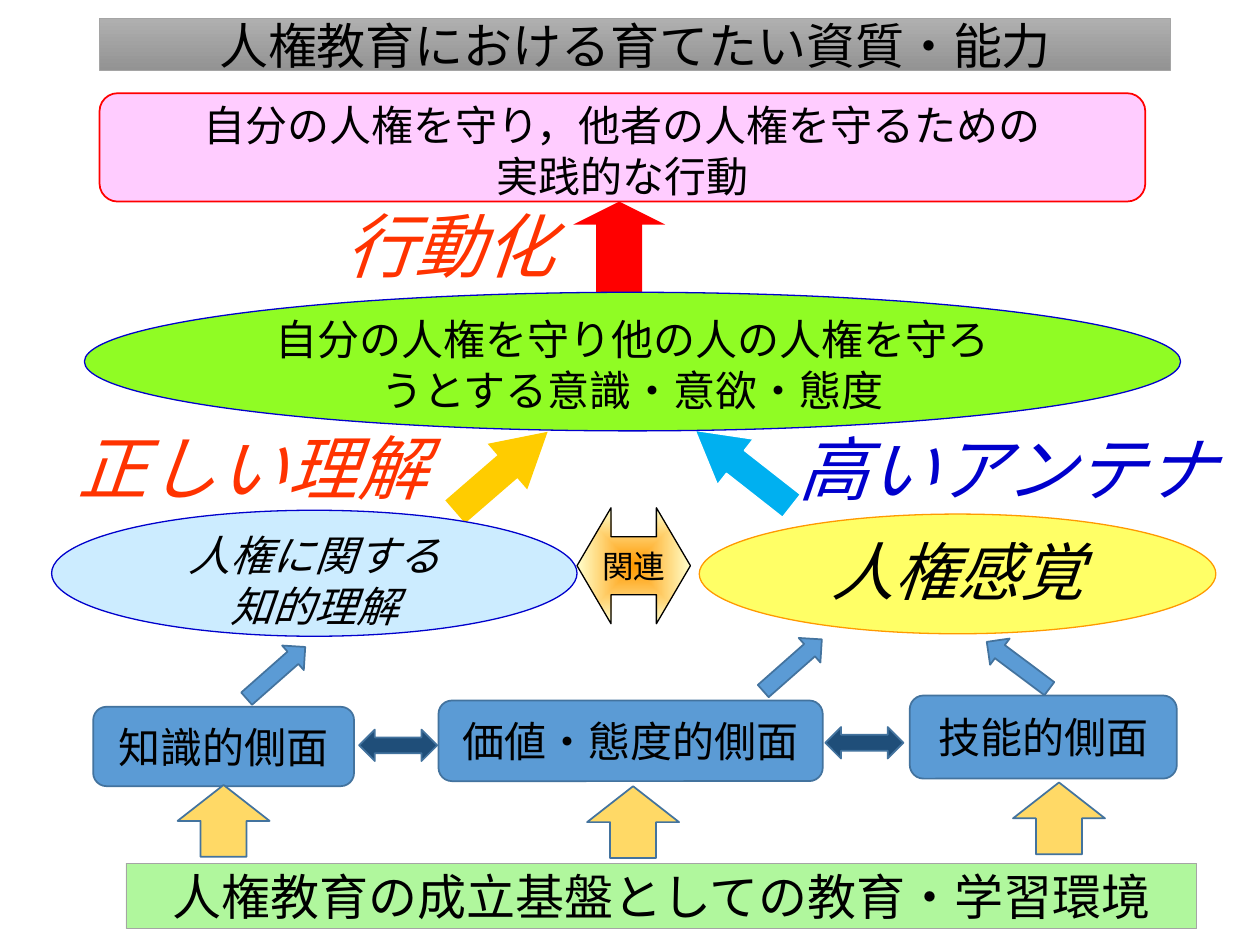
from dataclasses import dataclass

from lxml import etree
from pptx import Presentation
from pptx.dml.color import RGBColor
from pptx.enum.shapes import MSO_SHAPE
from pptx.enum.text import MSO_ANCHOR, MSO_AUTO_SIZE, PP_ALIGN
from pptx.oxml.ns import qn
from pptx.util import Inches, Pt

RECT, ROUNDED, OVAL = MSO_SHAPE.RECTANGLE, MSO_SHAPE.ROUNDED_RECTANGLE, MSO_SHAPE.OVAL
UP, RIGHT, BOTH = MSO_SHAPE.UP_ARROW, MSO_SHAPE.RIGHT_ARROW, MSO_SHAPE.LEFT_RIGHT_ARROW
TOP, MIDDLE = MSO_ANCHOR.TOP, MSO_ANCHOR.MIDDLE
CENTER, FIT_SHAPE = PP_ALIGN.CENTER, MSO_AUTO_SIZE.SHAPE_TO_FIT_TEXT

# The slide is a grid of 100 columns by 75 rows of square cells
COLUMNS, ROWS, CELL = 100, 75, 0.1


@dataclass(frozen=True)
class Theme:
    font: str = "Noto Sans CJK JP"
    link_font: str = "Comic Neue"
    small: int = 18
    body: int = 24
    banner: int = 28
    sense: int = 36
    callout: int = 40
    ink: str = "000000"
    white: str = "FFFFFF"
    red: str = "FF0000"
    vermilion: str = "FF3300"
    navy: str = "0000CC"
    pale_blue: str = "99CCFF"
    pink: str = "FFCCFF"
    lime: str = "90FC24"
    yellow: str = "FFFF66"
    orange: str = "FF9900"
    cream: str = "FFFFCC"
    gold: str = "FFCC00"
    sky: str = "00B0F0"
    ice: str = "CCECFF"
    blue: str = "5B9BD5"
    blue_edge: str = "43739E"
    dark_blue: str = "1F4E79"
    sand: str = "FFD966"
    mint: str = "B0F79D"
    grey: str = "A5A5A5"
    grey_light: str = "AFAFAF"
    grey_dark: str = "939393"


THEME = Theme()


def cells(*counts):
    return [Inches(count * CELL) for count in counts]


def rgb(code):
    return RGBColor.from_string(code)


def add_figure(slide, preset, frame, fill, edge=None, edge_width=1, turn=0, adjust=()):
    """Draw a preset shape; a pair of fill colours gives a gradient."""
    figure = slide.shapes.add_shape(preset, *cells(*frame))
    figure.shadow.inherit = False
    figure.rotation = turn
    for index, value in enumerate(adjust):
        figure.adjustments[index] = value
    if isinstance(fill, tuple):
        figure.fill.gradient()
        figure.fill.gradient_angle = 270
        for stop, code in zip(figure.fill.gradient_stops, fill):
            stop.color.rgb = rgb(code)
    else:
        figure.fill.solid()
        figure.fill.fore_color.rgb = rgb(fill)
    if edge:
        figure.line.color.rgb = rgb(edge)
        figure.line.width = Pt(edge_width)
    else:
        figure.line.fill.background()
    return figure


def make_gradient_radiate(figure):
    """Let the gradient run from the centre outwards."""
    linear = next(figure._element.spPr.iter(qn("a:lin")))
    radial = etree.Element(qn("a:path"), {"path": "rect"})
    etree.SubElement(radial, qn("a:fillToRect"), dict.fromkeys("ltrb", "50000"))
    linear.getparent().replace(linear, radial)


def write(figure, text, size, color=THEME.ink, font=THEME.font, italic=False,
          anchor=MIDDLE, align=CENTER, wrap=True, tight=False):
    frame = figure.text_frame
    frame.text = text
    frame.word_wrap = wrap
    frame.vertical_anchor = anchor
    if tight:
        frame.margin_left = frame.margin_right = Inches(0.08)
        frame.margin_top = frame.margin_bottom = Inches(0.01)
    for paragraph in frame.paragraphs:
        paragraph.alignment = align
        for run in paragraph.runs:
            run.font.size = Pt(size)
            run.font.italic = italic
            run.font.color.rgb = rgb(color)
            run.font.name = font
            etree.SubElement(run.font._element, qn("a:ea"), {"typeface": font})


def add_callout(slide, frame, text, color, outline):
    """Large slanted words with outlined letters."""
    callout = slide.shapes.add_textbox(*cells(*frame))
    write(callout, text, THEME.callout, color, italic=True, anchor=TOP, align=None, wrap=False)
    callout.text_frame.auto_size = FIT_SHAPE
    for run in callout.text_frame.paragraphs[0].runs:
        line = etree.Element(qn("a:ln"), {"w": str(Pt(1))})
        solid = etree.SubElement(line, qn("a:solidFill"))
        etree.SubElement(solid, qn("a:srgbClr"), {"val": outline})
        run.font._element.insert(0, line)


def add_goal(slide):
    goal = add_figure(slide, ROUNDED, (7.9, 7.4, 83, 8.6), THEME.pink, THEME.red)
    write(goal, "自分の人権を守り，他者の人権を守るための\n実践的な行動",
          THEME.body, anchor=TOP, tight=True)


def add_main_arrows(slide):
    add_figure(slide, UP, (45.5, 16, 7.3, 7.3), THEME.red, adjust=(0.5, 0.25))
    add_figure(slide, UP, (37.4, 32.6, 4.8, 9.7), THEME.gold, turn=49.1, adjust=(0.5, 0.88))
    add_figure(slide, UP, (56.7, 32.3, 4.6, 9.7), THEME.sky, THEME.white, 0.75,
               turn=308.1, adjust=(0.5, 0.88))
    relation = add_figure(slide, BOTH, (45.8, 40.3, 9, 9.2), (THEME.orange, THEME.cream),
                          THEME.ink, 0.75, adjust=(0.5, 0.3))
    make_gradient_radiate(relation)
    write(relation, "関連", THEME.small, font=THEME.link_font, wrap=False)


def add_ovals(slide):
    ovals = [
        ((6.7, 23.2, 87, 11), THEME.lime, THEME.navy, THEME.body, False,
         "自分の人権を守り他の人の人権を守ろうとする意識・意欲・態度"),
        ((55.5, 40.8, 41, 9.5), THEME.yellow, THEME.orange, THEME.sense, True, "人権感覚"),
        ((4.1, 40.5, 41.7, 10), THEME.ice, THEME.navy, THEME.body, True,
         "人権に関する\n知的理解"),
    ]
    for frame, fill, edge, size, italic, text in ovals:
        oval = add_figure(slide, OVAL, frame, fill, edge, 0.75)
        write(oval, text, size, italic=italic, anchor=TOP, tight=True)


def add_callouts(slide):
    add_callout(slide, (26.4, 15.6, 18.8, 6.4), "行動化", THEME.vermilion, THEME.red)
    add_callout(slide, (5.2, 33.2, 30.1, 6.4), "正しい理解", THEME.vermilion, THEME.gold)
    add_callout(slide, (62.4, 33.3, 35.7, 6.4), "高いアンテナ", THEME.navy, THEME.pale_blue)


def add_banners(slide):
    banners = [
        ((7.9, 1.5, 85, 4.1), (THEME.grey_light, THEME.grey_dark),
         "人権教育における育てたい資質・能力"),
        ((10, 68.5, 85, 5.2), THEME.mint, "人権教育の成立基盤としての教育・学習環境"),
    ]
    for frame, fill, text in banners:
        write(add_figure(slide, RECT, frame, fill, THEME.grey, 0.5), text, THEME.banner)


def add_aspects(slide):
    aspects = [
        ((7.4, 56.1, 20.7, 6.3), "知識的側面"),
        ((34.8, 55.6, 30.5, 6.4), "価値・態度的側面"),
        ((72.2, 55.2, 21.2, 6.6), "技能的側面"),
    ]
    for frame, text in aspects:
        write(add_figure(slide, ROUNDED, frame, THEME.blue, THEME.blue_edge), text, THEME.body)
    # From each aspect up to an oval
    for left, top, turn in [(18.8, 52.1, 318.6), (59.8, 51.5, 318.6), (77.7, 51.5, 216.8)]:
        add_figure(slide, RIGHT, (left, top, 6.2, 2.6), THEME.blue, THEME.blue_edge, turn=turn)
    # From the foundation up to each aspect
    for left, top in [(14.9, 61.5), (47.4, 61.6), (81.2, 61.3)]:
        add_figure(slide, RIGHT, (left, top, 5.7, 7.3), THEME.sand, THEME.blue_edge, turn=270)
    # Between neighbouring aspects
    for left, top in [(28.5, 57.9), (65.5, 57.7)]:
        add_figure(slide, BOTH, (left, top, 6.2, 2.5), THEME.dark_blue, THEME.blue_edge)


def main():
    deck = Presentation()
    deck.slide_width, deck.slide_height = cells(COLUMNS, ROWS)
    slide = deck.slides.add_slide(deck.slide_layouts[6])
    add_goal(slide)
    add_main_arrows(slide)
    add_ovals(slide)
    add_callouts(slide)
    add_banners(slide)
    add_aspects(slide)
    deck.save("out.pptx")


if __name__ == "__main__":
    main()
